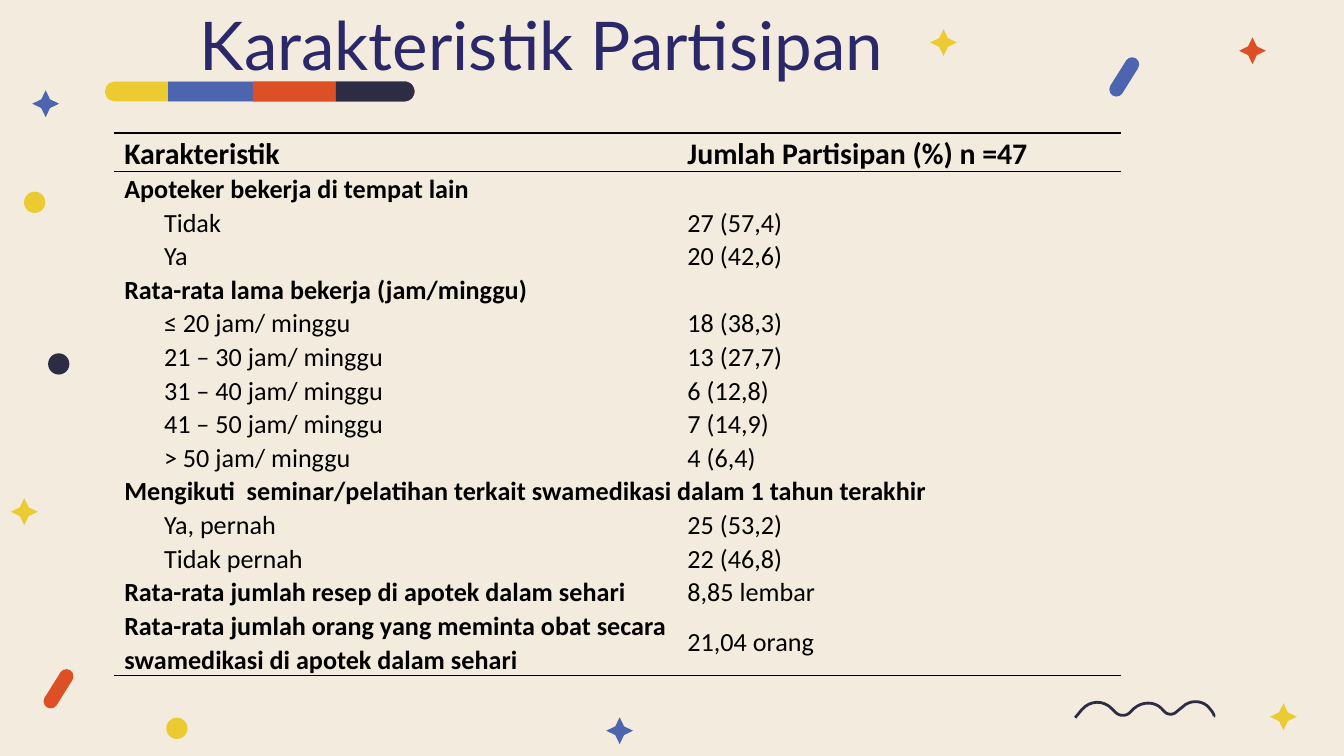
import math
import pptx
import pptx.dml.color
import pptx.enum.shapes
import pptx.enum.text
import pptx.oxml
import pptx.oxml.ns
import pptx.util
from lxml import etree

Pt = pptx.util.Pt
SHAPE = pptx.enum.shapes.MSO_SHAPE
ANCHOR = pptx.enum.text.MSO_ANCHOR
ALIGN = pptx.enum.text.PP_ALIGN

GOLD, BLUE, RED, DARK = "ECCA31", "4C65AE", "DD5025", "2C2D44"
SAND, NAVY, BLACK = "F3EBDE", "2A2869", "000000"

STARS = [
    (505.5, 22.8, GOLD), (687.6, 384, GOLD), (332, 391.5, BLUE),
    (13, 274.2, GOLD), (24.5, 55.6, BLUE), (671, 27.2, RED),
]
DOTS = [(94.8, 390.2, GOLD), (31.5, 195, DARK), (18.6, 108.4, GOLD)]
PILLS = [(31.4, 369, RED), (602.3, 41.2, BLUE)]
BANDS = [(90, BLUE), (135.4, RED), (180, DARK)]
CURVES = [
    [(579.6, 380.2), (583.9, 375.1), (591.1, 375.1), (595.4, 379.4)],
    [(597.6, 381.6), (599.8, 383.8), (603.4, 383.8), (605.5, 381.6)],
    [(607.7, 379.4), (612, 375.8), (618.5, 375.8), (622.1, 379.4)],
    [(624.2, 381.6), (625.7, 383), (628.6, 383), (630, 381.6)],
    [(633.6, 378.7), (637.2, 375.1), (643, 375.1), (646.6, 378)],
    [(646.6, 378), (650.2, 381.6), (650.9, 383.8), (650.2, 383.8)],
]

HEAD, GROUP, ITEM = "head", "group", "item"
ROWS = [
    (HEAD, "Karakteristik", "Jumlah Partisipan (%) n =47"),
    (GROUP, "Apoteker bekerja di tempat lain", ""),
    (ITEM, "Tidak", "27 (57,4)"),
    (ITEM, "Ya", "20 (42,6)"),
    (GROUP, "Rata-rata lama bekerja (jam/minggu)", ""),
    (ITEM, "≤ 20 jam/ minggu", "18 (38,3)"),
    (ITEM, "21 – 30 jam/ minggu", "13 (27,7)"),
    (ITEM, "31 – 40 jam/ minggu", "6 (12,8)"),
    (ITEM, "41 – 50 jam/ minggu", "7 (14,9)"),
    (ITEM, "> 50 jam/ minggu", "4 (6,4)"),
    (GROUP, "Mengikuti  seminar/pelatihan terkait swamedikasi dalam 1 tahun terakhir", None),
    (ITEM, "Ya, pernah", "25 (53,2)"),
    (ITEM, "Tidak pernah", "22 (46,8)"),
    (GROUP, "Rata-rata jumlah resep di apotek dalam sehari", "8,85 lembar"),
    (GROUP, "Rata-rata jumlah orang yang meminta obat secara swamedikasi di apotek dalam sehari",
     "21,04 orang"),
]


def paint(fill, color):
    fill.solid()
    fill.fore_color.rgb = pptx.dml.color.RGBColor.from_string(color)


def style(font, name, size, color, bold=False):
    font.name = name
    font.size = Pt(size)
    font.bold = bold
    paint(font.fill, color)


def finish(shape, color):
    shape.shadow.inherit = False
    paint(shape.fill, color)
    shape.line.fill.background()


def add_mark(slide, kind, mid, size, color, turn=0, adjust=None):
    (x, y), (wide, high) = mid, size
    mark = slide.shapes.add_shape(kind, Pt(x - wide / 2), Pt(y - high / 2), Pt(wide), Pt(high))
    mark.rotation = turn
    if adjust is not None:
        mark.adjustments[0] = adjust
    finish(mark, color)


def trace(slide, dots, close):
    pen = slide.shapes.build_freeform(Pt(dots[0][0]), Pt(dots[0][1]))
    pen.add_line_segments([(Pt(x), Pt(y)) for x, y in dots[1:]], close=close)
    return pen.convert_to_shape()


def add_band(slide, left, color):
    right, top, high = 222, 43.7, 10.6
    half = high / 2
    turns = [math.radians(a) for a in range(-90, 91, 10)]
    arc = [(right - half + half * math.cos(t), top + half + half * math.sin(t)) for t in turns]
    finish(trace(slide, [(left, top)] + arc + [(left, top + high)], True), color)


def bezier(curve, t):
    parts = [(1 - t) ** 3, 3 * t * (1 - t) ** 2, 3 * t * t * (1 - t), t ** 3]
    return tuple(sum(p * dot[axis] for p, dot in zip(parts, curve)) for axis in (0, 1))


def add_wave(slide):
    dots = [(576, 384.5)]
    for curve in CURVES:
        dots += [bezier(curve, step / 8) for step in range(9)]
    wave = trace(slide, dots, False)
    wave.shadow.inherit = False
    wave.fill.background()
    wave.line.width = Pt(1.5)
    paint(wave.line.fill, DARK)


def add_title(slide):
    frame = slide.shapes.add_textbox(Pt(41), Pt(17.3), Pt(498.2), Pt(34.6)).text_frame
    frame.word_wrap = True
    frame.vertical_anchor = ANCHOR.BOTTOM
    frame.margin_left = frame.margin_right = Pt(7.2)
    frame.margin_top = frame.margin_bottom = Pt(7.2)
    line = frame.paragraphs[0]
    line.text = "Karakteristik Partisipan"
    line.alignment = ALIGN.CENTER
    style(line.font, "Lato", 36, NAVY)


def set_edges(cell, ruled):
    props = cell._tc.get_or_add_tcPr()
    for side in "LRTB":
        edge = etree.SubElement(props, pptx.oxml.ns.qn("a:ln" + side), w=str(Pt(1)))
        if side in ruled:
            fill = etree.SubElement(edge, pptx.oxml.ns.qn("a:solidFill"))
            etree.SubElement(fill, pptx.oxml.ns.qn("a:srgbClr"), val=BLACK)
        else:
            etree.SubElement(edge, pptx.oxml.ns.qn("a:noFill"))


def fill_cell(cell, text, size, bold, indent, ruled):
    cell.margin_left = cell.margin_right = Pt(5.4)
    cell.margin_top = cell.margin_bottom = 0
    cell.vertical_anchor = ANCHOR.MIDDLE
    set_edges(cell, ruled)
    cell.fill.background()
    line = cell.text_frame.paragraphs[0]
    if text:
        line.text = text
    line.line_spacing = 1.07
    line.space_after = Pt(8)
    style(line.font, "Calibri", size, BLACK, bold)
    if indent:
        props = line._p.get_or_add_pPr()
        props.set("marL", str(Pt(21.3)))
        props.set("indent", "0")


def add_grid(slide):
    last = len(ROWS) - 1
    grid = slide.shapes.add_table(len(ROWS), 2, Pt(61.2), Pt(71.3), Pt(539.3), Pt(283.7)).table
    grid.first_row = grid.horz_banding = False
    for col, wide in zip(grid.columns, (301.7, 237.6)):
        col.width = Pt(wide)
    for num, (kind, label, value) in enumerate(ROWS):
        grid.rows[num].height = Pt(36 if num == last else 17.5)
        size = 16 if kind == HEAD else 14
        ruled = {0: "TB", 1: "T", last: "B"}.get(num, "")
        fill_cell(grid.cell(num, 0), label, size, kind != ITEM, kind == ITEM, ruled)
        fill_cell(grid.cell(num, 1), value, size, kind == HEAD, False, ruled)
        if value is None:
            grid.cell(num, 0).merge(grid.cell(num, 1))


def main():
    deck = pptx.Presentation()
    deck.slide_width, deck.slide_height = Pt(720), Pt(405)
    slide = deck.slides.add_slide(deck.slide_layouts[6])
    paint(slide.background.fill, SAND)
    for x, y, color in STARS:
        add_mark(slide, SHAPE.STAR_4_POINT, (x, y), (14.4, 14.4), color, adjust=0.23)
    for x, y, color in DOTS:
        add_mark(slide, SHAPE.OVAL, (x, y), (11.4, 11.4), color)
    for x, y, color in PILLS:
        add_mark(slide, SHAPE.ROUNDED_RECTANGLE, (x, y), (7.6, 23.5), color, 32, 0.5)
    add_mark(slide, SHAPE.ROUNDED_RECTANGLE, (139.1, 49), (165.8, 10.6), GOLD, adjust=0.5)
    for left, color in BANDS:
        add_band(slide, left, color)
    add_wave(slide)
    add_title(slide)
    add_grid(slide)
    deck.save("out.pptx")


if __name__ == "__main__":
    main()
